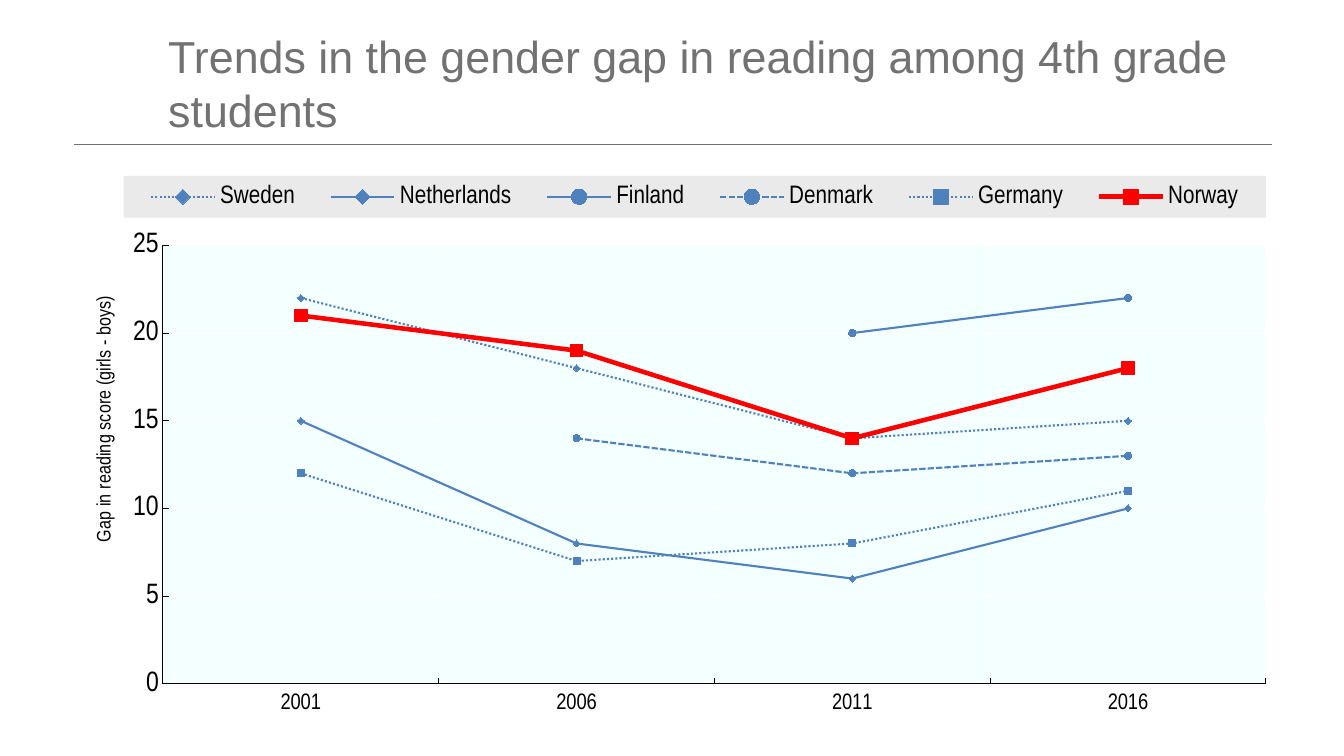
from pptx import Presentation
from pptx.chart.data import CategoryChartData
from pptx.dml.color import RGBColor
from pptx.enum.chart import (XL_CHART_TYPE, XL_LEGEND_POSITION, XL_MARKER_STYLE,
                             XL_TICK_LABEL_POSITION, XL_TICK_MARK)
from pptx.enum.dml import MSO_LINE
from pptx.enum.shapes import MSO_CONNECTOR
from pptx.enum.text import MSO_ANCHOR, PP_ALIGN
from pptx.oxml import parse_xml
from pptx.oxml.ns import nsdecls
from pptx.util import Inches, Pt

BLUE, RED, GREY, BLACK, WHITE = "4F81BD", "FF0000", "727272", "000000", "FFFFFF"
YEARS = ["2001", "2006", "2011", "2016"]
DIAMOND, CIRCLE, SQUARE = (XL_MARKER_STYLE.DIAMOND, XL_MARKER_STYLE.CIRCLE,
                           XL_MARKER_STYLE.SQUARE)
DOTTED, DASHED = MSO_LINE.ROUND_DOT, MSO_LINE.SQUARE_DOT
# country, gaps, colour, line width, dash, marker, marker size
COUNTRIES = [
    ("Sweden", (22, 18, 14, 15), BLUE, 1.5, DOTTED, DIAMOND, 5),
    ("Netherlands", (15, 8, 6, 10), BLUE, 1.5, None, DIAMOND, 5),
    ("Finland", (None, None, 20, 22), BLUE, 1.5, None, CIRCLE, 5),
    ("Denmark", (None, 14, 12, 13), BLUE, 1.5, DASHED, CIRCLE, 5),
    ("Germany", (12, 7, 8, 11), BLUE, 1.5, DOTTED, SQUARE, 5),
    ("Norway", (21, 19, 14, 18), RED, 3.25, None, SQUARE, 9),
]


def rgb(colour):
    return RGBColor.from_string(colour)


def manual_layout(x, y, w=None, h=None, inner=False):
    target = '<c:layoutTarget val="inner"/>' if inner else ""
    modes = '<c:xMode val="edge"/><c:yMode val="edge"/>'
    lengths = "".join(f'<c:{tag} val="{value}"/>'
                      for tag, value in zip("xywh", (x, y, w, h)) if value is not None)
    return parse_xml(f'<c:layout {nsdecls("c")}><c:manualLayout>{target}{modes}{lengths}'
                     "</c:manualLayout></c:layout>")


def place(part, index, layout):
    for old in part.xpath("c:layout"):
        part.remove(old)
    part.insert(index, layout)


def solid_fill(colour):
    return parse_xml(f'<c:spPr {nsdecls("c", "a")}><a:solidFill><a:srgbClr val="{colour}"/>'
                     "</a:solidFill><a:ln><a:noFill/></a:ln></c:spPr>")


class GapSlide:
    heading_font = "Arial"
    label_font = "Arial Narrow"

    def __init__(self, deck):
        self.slide = deck.slides.add_slide(deck.slide_layouts[6])

    def style(self, font, size, colour, name):
        font.name, font.size, font.bold = name, Pt(size), False
        font.color.rgb = rgb(colour)

    def stroke(self, line, colour, width):
        line.color.rgb = rgb(colour)
        line.width = Pt(width)

    def heading(self, text, x, y, w, h):
        box = self.slide.shapes.add_textbox(Inches(x), Inches(y), Inches(w), Inches(h))
        frame = box.text_frame
        frame.word_wrap = True
        frame.vertical_anchor = MSO_ANCHOR.MIDDLE
        frame.text = text
        paragraph = frame.paragraphs[0]
        paragraph.alignment = PP_ALIGN.LEFT
        self.style(paragraph.runs[0].font, 32, GREY, self.heading_font)

    def rule(self, x, y, w):
        rule = self.slide.shapes.add_connector(
            MSO_CONNECTOR.STRAIGHT, Inches(x), Inches(y), Inches(x + w), Inches(y))
        self.stroke(rule.line, GREY, 0.5)
        rule.element.spPr.append(parse_xml(f'<a:effectLst {nsdecls("a")}/>'))

    def axis(self, axis, size):
        axis.major_tick_mark = XL_TICK_MARK.INSIDE
        axis.minor_tick_mark = XL_TICK_MARK.NONE
        self.style(axis.tick_labels.font, size, BLACK, self.label_font)
        self.stroke(axis.format.line, BLACK, 0.75)
        axis.has_major_gridlines = True
        self.stroke(axis.major_gridlines.format.line, WHITE, 0.75)

    def axis_title(self, axis, text):
        frame = axis.axis_title.text_frame
        frame.text = text
        self.style(frame.paragraphs[0].runs[0].font, 14, BLACK, self.label_font)
        title = axis.axis_title._element
        body = title.xpath("c:tx/c:rich/a:bodyPr")[0]
        body.set("rot", "-5400000")
        body.set("vert", "horz")
        place(title, 1, manual_layout(0.013, 0.228))

    def legend(self, chart):
        chart.has_legend = True
        chart.legend.position = XL_LEGEND_POSITION.RIGHT
        chart.legend.include_in_layout = True
        self.style(chart.legend.font, 18, BLACK, self.label_font)
        legend = chart.element.xpath("//c:legend")[0]
        place(legend, 1, manual_layout(0.041, 0.019, 0.957, 0.075))
        legend.xpath("c:overlay")[0].addnext(solid_fill("EAEAEA"))

    def line_chart(self, x, y, w, h):
        data = CategoryChartData()
        data.categories = YEARS
        for country, gaps, *_ in COUNTRIES:
            data.add_series(country, gaps)
        chart = self.slide.shapes.add_chart(
            XL_CHART_TYPE.LINE_MARKERS, Inches(x), Inches(y), Inches(w), Inches(h), data).chart
        chart.has_title = False
        self.style(chart.font, 10, GREY, "TeX Gyre Schola")

        # Country lines
        plot = chart.plots[0]
        plot.vary_by_categories = False
        for series, (_, _, colour, width, dash, marker, size) in zip(plot.series, COUNTRIES):
            series.smooth = False
            self.stroke(series.format.line, colour, width)
            if dash:
                series.format.line.dash_style = dash
            series.marker.style, series.marker.size = marker, size
            series.marker.format.fill.solid()
            series.marker.format.fill.fore_color.rgb = rgb(colour)
            self.stroke(series.marker.format.line, colour, 0.75)

        # Axes
        years, scores = chart.category_axis, chart.value_axis
        self.axis(years, 16)
        years.tick_label_position = XL_TICK_LABEL_POSITION.LOW
        self.axis(scores, 20)
        scores.minimum_scale, scores.maximum_scale, scores.major_unit = 0, 25, 5
        self.axis_title(scores, "Gap in reading score (girls - boys)")

        # Plot area and legend
        plot_area = chart.element.xpath("//c:plotArea")[0]
        place(plot_area, 0, manual_layout(0.074, 0.144, 0.924, 0.788, inner=True))
        plot_area.append(solid_fill("F4FFFF"))
        self.legend(chart)


def main():
    deck = Presentation()
    deck.slide_width, deck.slide_height = Inches(13.33), Inches(7.5)
    page = GapSlide(deck)
    page.rule(0.73, 1.43, 11.89)
    page.heading("Trends in the gender gap in reading among 4th grade students",
                 1.57, 0.26, 10.81, 1.12)
    page.line_chart(0.74, 1.64, 11.84, 5.52)
    deck.save("out.pptx")


if __name__ == "__main__":
    main()
